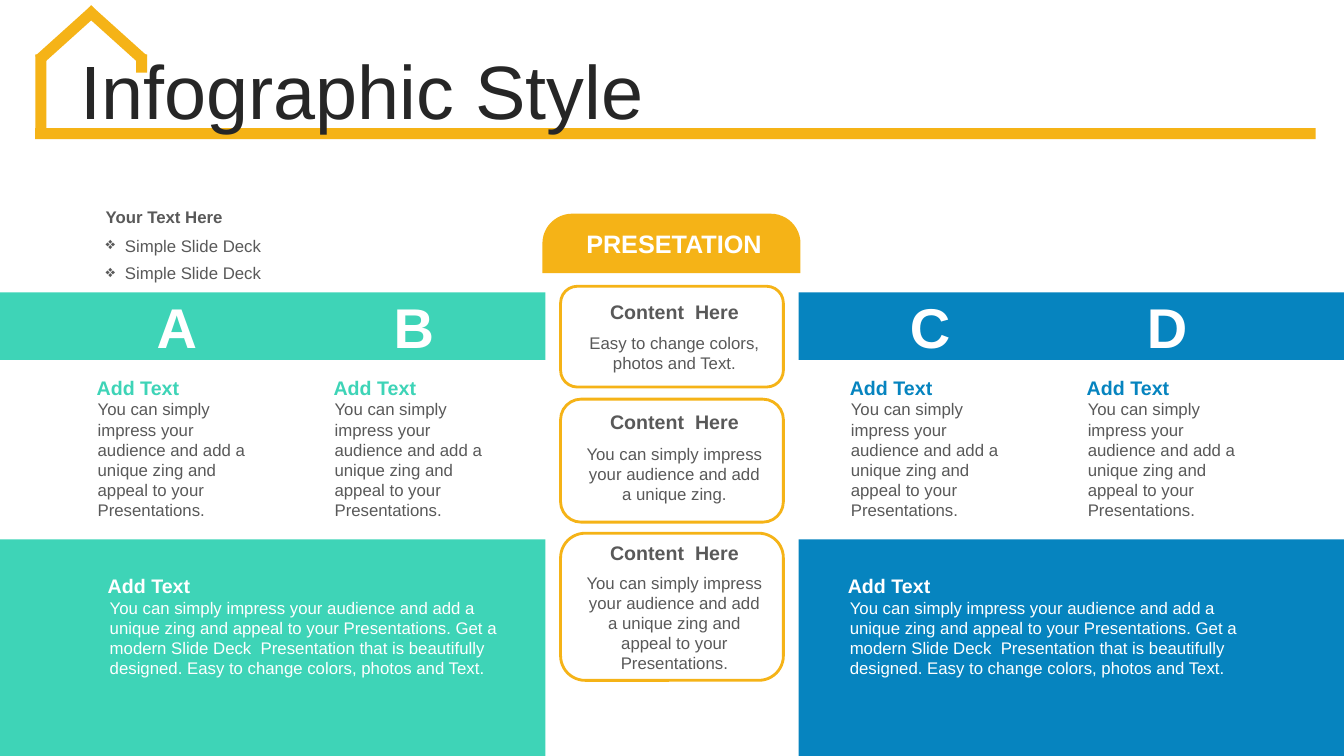
"""Build the Infographic Style slide with four lettered columns and three cards."""
import pptx
import pptx.dml.color
import pptx.enum.shapes
import pptx.enum.text
import pptx.oxml.ns
import pptx.util
from lxml import etree

Inches, Pt = pptx.util.Inches, pptx.util.Pt
SHAPE = pptx.enum.shapes.MSO_SHAPE
ALIGN = pptx.enum.text.PP_ALIGN
ANCHOR = pptx.enum.text.MSO_ANCHOR

YELLOW, TEAL, BLUE = "F5B317", "3ED4B7", "0684BF"
WHITE, GREY, DARK = "FFFFFF", "595959", "262626"

TITLE = "Infographic Style"
BANNER = "PRESETATION"
INTRO = "Your Text Here"
BULLETS = ["Simple Slide Deck", "Simple Slide Deck"]
HEADING = "Add Text"
CARD_HEADING = "Content  Here"
COLUMN_TEXT = ("You can simply impress your audience and add a unique zing "
               "and appeal to your Presentations.")
PANEL_TEXT = COLUMN_TEXT + (" Get a modern Slide Deck  Presentation that is beautifully "
                            "designed. Easy to change colors, photos and Text.")

HOUSE = [
    (0.35, 1.27, 12.7, 0.11, 0),
    (0.35, 0.54, 0.11, 0.8, 0),
    (1.35, 0.54, 0.11, 0.18, 0),
    (0.61, -0.03, 0.11, 0.75, 48),
    (1.09, -0.03, 0.11, 0.75, 312),
]
SIDES = [
    {"color": TEAL, "x": 0, "w": 5.41, "letters": "AB", "column_x": 0.86,
     "panel_x": 0.97, "panel_w": 4.26},
    {"color": BLUE, "x": 7.92, "w": 5.42, "letters": "CD", "column_x": 8.33,
     "panel_x": 8.31, "panel_w": 4.05},
]
COLUMN_PITCH = 2.35
CARDS = [
    {"y": 2.84, "h": 1, "heading_y": 2.93, "text_y": 3.25, "text_h": 0.5,
     "text": "Easy to change colors, photos and Text."},
    {"y": 3.96, "h": 1.22, "heading_y": 4.02, "text_y": 4.35, "text_h": 0.71,
     "text": "You can simply impress your audience and add a unique zing."},
    {"y": 5.29, "h": 1.46, "heading_y": 5.32, "text_y": 5.63, "text_h": 1.11,
     "text": COLUMN_TEXT},
]


def rgb(color):
    return pptx.dml.color.RGBColor.from_string(color)


def add_shape(s, kind, x, y, w, h, fill=None, line=None):
    sp = s.shapes.add_shape(kind, Inches(x), Inches(y), Inches(w), Inches(h))
    sp.shadow.inherit = False
    if fill:
        sp.fill.solid()
        sp.fill.fore_color.rgb = rgb(fill)
    else:
        sp.fill.background()
    if line:
        sp.line.color.rgb = rgb(line)
        sp.line.width = Pt(2)
    else:
        sp.line.fill.background()
    return sp


def add_text(s, text, x, y, w, h, size, color, bold=False, align=ALIGN.LEFT):
    sp = s.shapes.add_textbox(Inches(x), Inches(y), Inches(w), Inches(h))
    tf = sp.text_frame
    tf.word_wrap = True
    p = tf.paragraphs[0]
    p.alignment = align
    r = p.add_run()
    r.text = text
    r.font.name = "Arial"
    r.font.size = Pt(size)
    r.font.bold = bold
    r.font.color.rgb = rgb(color)
    return sp


def add_bullet(p, char):
    pPr = p._p.get_or_add_pPr()
    pPr.set("marL", str(Inches(0.19)))
    pPr.set("indent", str(Inches(-0.19)))
    bullet = etree.SubElement(pPr, pptx.oxml.ns.qn("a:buChar"))
    bullet.set("char", char)


def add_header(s):
    for x, y, w, h, angle in HOUSE:
        add_shape(s, SHAPE.RECTANGLE, x, y, w, h, YELLOW).rotation = angle
    tf = add_text(s, TITLE, 0.7, 0.55, 12.31, 0.79, 54, DARK).text_frame
    tf.vertical_anchor = ANCHOR.MIDDLE
    tf.paragraphs[0].line_spacing = 0.9
    tf.paragraphs[0].space_before = Pt(10)


def add_intro(s):
    add_text(s, INTRO, 0.95, 2, 1.91, 0.3, 12, GREY, True)
    for i, text in enumerate(BULLETS):
        sp = add_text(s, text, 0.95, 2.29 + 0.27 * i, 1.91, 0.3, 12, GREY)
        add_bullet(sp.text_frame.paragraphs[0], "❖")


def add_side(s, side):
    color = side["color"]
    for y, h in [(5.35, 2.15), (2.9, 0.67)]:
        add_shape(s, SHAPE.RECTANGLE, side["x"], y, side["w"], h, color)
    for i, letter in enumerate(side["letters"]):
        x = side["column_x"] + COLUMN_PITCH * i
        add_text(s, letter, x + 0.58, 2.85, 0.63, 0.77, 40, WHITE, True, ALIGN.CENTER)
        add_text(s, HEADING, x, 3.68, 1.78, 0.34, 14, color, True)
        add_text(s, COLUMN_TEXT, x + 0.01, 3.91, 1.78, 1.31, 12, GREY)
    x, w = side["panel_x"], side["panel_w"]
    add_text(s, HEADING, x, 5.64, w, 0.34, 14, WHITE, True)
    add_text(s, PANEL_TEXT, x + 0.02, 5.88, w, 0.91, 12, WHITE)


def add_center(s):
    sp = add_shape(s, SHAPE.ROUND_2_SAME_RECTANGLE, 5.38, 2.12, 2.56, 0.59, YELLOW)
    sp.adjustments[0] = 0.5
    sp.adjustments[1] = 0
    add_text(s, BANNER, 5.61, 2.22, 2.15, 0.4, 18, WHITE, True, ALIGN.CENTER)
    for card in CARDS:
        add_shape(s, SHAPE.ROUNDED_RECTANGLE, 5.56, card["y"], 2.21, card["h"], line=YELLOW)
        add_text(s, CARD_HEADING, 5.71, card["heading_y"], 1.96, 0.34, 14, GREY, True,
                 ALIGN.CENTER)
        add_text(s, card["text"], 5.71, card["text_y"], 1.96, card["text_h"], 12, GREY,
                 align=ALIGN.CENTER)


def main():
    prs = pptx.Presentation()
    prs.slide_width, prs.slide_height = Inches(13.33), Inches(7.5)
    s = prs.slides.add_slide(prs.slide_layouts[6])
    add_header(s)
    for side in SIDES:
        add_side(s, side)
    add_center(s)
    add_intro(s)
    prs.save("out.pptx")


if __name__ == "__main__":
    main()
